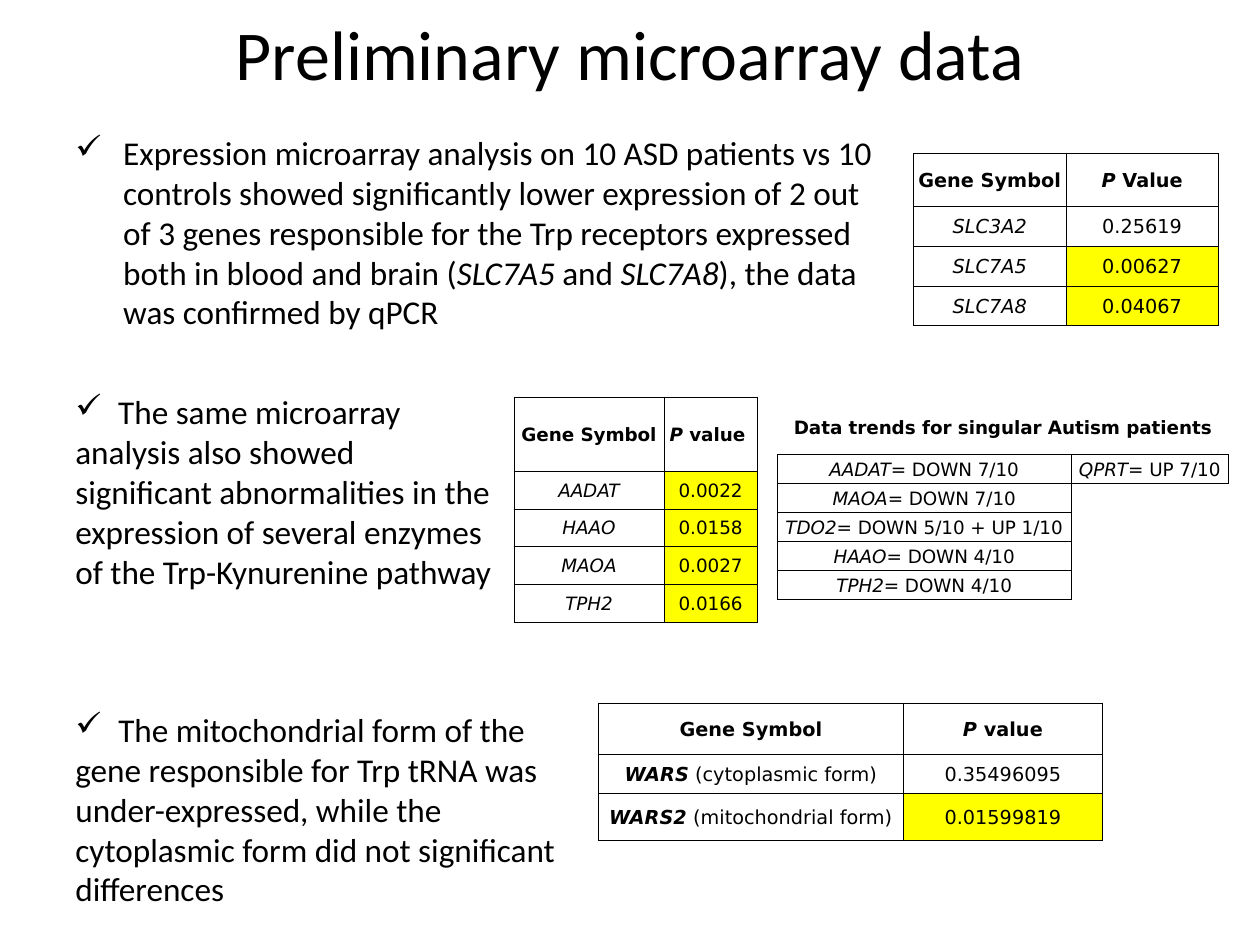
"""Build the preliminary microarray data slide."""
import lxml.etree
import pptx
import pptx.dml.color
import pptx.enum.text
import pptx.oxml.ns
import pptx.util

WIDTH, HEIGHT = 10, 7.5
BLACK, YELLOW = "000000", "FFFF00"
BODY, TABLE = "Calibri", "DejaVu Sans"
CENTER = pptx.enum.text.PP_ALIGN.CENTER
MIDDLE = pptx.enum.text.MSO_ANCHOR.MIDDLE

TITLE = "Preliminary microarray data"
HANGING = dict(margin=0.38, indent=-0.38)
TABBED = dict(margin=0, indent=0, tab=0.34)
BULLETS = [
    ((0.5, 1, 6.67, 1.92), HANGING, [
        ("Expression microarray analysis on 10 ASD patients vs 10 controls showed significantly "
         "lower expression of 2 out of 3 genes responsible for the Trp receptors expressed both "
         "in blood and brain (", ""), ("SLC7A5", "i"), (" and ", ""), ("SLC7A8", "i"),
        ("), the data was confirmed by qPCR", "")]),
    ((0.5, 3.06, 3.5, 2.02), TABBED,
     "\tThe same microarray analysis also showed significant abnormalities in the expression "
     "of several enzymes of the Trp-Kynurenine pathway"),
    ((0.5, 5.58, 4.08, 1.7), TABBED,
     "\tThe mitochondrial form of the gene responsible for Trp tRNA was under-expressed, "
     "while the cytoplasmic form did not significant differences"),
]


def gene(name, rest="", style="i"):
    """Return the runs for an italic gene symbol and what follows it."""
    return [(name, style), (rest, "")] if rest else [(name, style)]


def header(value):
    """Return the bold header row of a gene table."""
    return [[("Gene Symbol", "b")], [("P", "bi"), (value, "b")]]


TABLES = [
    dict(at=(7.25, 1.22), cols=[1.21, 1.21], heights=[0.42] + [0.315] * 3, size=11, bare=0, rows=[
        header(" Value"),
        [gene("SLC3A2"), "0.25619"],
        [gene("SLC7A5"), "0.00627"],
        [gene("SLC7A8"), "0.04067"]]),
    dict(at=(4.08, 2.67), cols=[1.19, 0.74], heights=[0.3, 0.18, 0.59] + [0.3] * 4, size=10.5,
         bare=2, rows=[
        [""],
        ["", ""],
        header(" value "),
        [gene("AADAT"), "0.0022"],
        [gene("HAAO"), "0.0158"],
        [gene("MAOA"), "0.0027"],
        [gene("TPH2"), "0.0166"]]),
    dict(at=(6.17, 3.17), cols=[2.33, 1.25], heights=[0.44] + [0.23] * 5, size=10.5, bare=1, rows=[
        [[("Data trends for singular Autism patients", "b")]],
        [gene("AADAT", "= DOWN 7/10"), gene("QPRT", "= UP 7/10")],
        [gene("MAOA", "= DOWN 7/10"), ""],
        [gene("TDO2", "= DOWN 5/10 + UP 1/10"), ""],
        [gene("HAAO", "= DOWN 4/10"), ""],
        [gene("TPH2", "= DOWN 4/10"), ""]]),
    dict(at=(4.75, 5.58), cols=[2.42, 1.58], heights=[0.41, 0.31, 0.37], size=11, bare=0, rows=[
        header(" value"),
        [gene("WARS", " (cytoplasmic form)", "bi"), "0.35496095"],
        [gene("WARS2", " (mitochondrial form)", "bi"), "0.01599819"]]),
]


def inches(*values):
    """Convert numbers to lengths."""
    return [pptx.util.Inches(v) for v in values]


def color(value):
    """Return the colour for a hex string."""
    return pptx.dml.color.RGBColor.from_string(value)


def sub(parent, tag, **attrs):
    """Append a drawing element to parent."""
    el = lxml.etree.SubElement(parent, pptx.oxml.ns.qn("a:" + tag))
    for key, value in attrs.items():
        el.set(key, str(value))
    return el


def write(tf, text, size, font, align=None, bullet=None):
    """Write a string or a list of (text, style) runs as one paragraph."""
    p = tf.paragraphs[0]
    if align is not None:
        p.alignment = align
    if bullet:
        ppr = p._p.get_or_add_pPr()
        ppr.set("marL", str(pptx.util.Inches(bullet["margin"])))
        ppr.set("indent", str(pptx.util.Inches(bullet["indent"])))
        sub(ppr, "buChar", char="✓")
        if "tab" in bullet:
            sub(sub(ppr, "tabLst"), "tab", pos=pptx.util.Inches(bullet["tab"]), algn="l")
    if not text:
        sub(p._p, "endParaRPr", sz=int(size * 100))
        return
    for part, style in [(text, "")] if isinstance(text, str) else text:
        r = p.add_run()
        r.text = part
        r.font.size = pptx.util.Pt(size)
        r.font.name = font
        r.font.bold = "b" in style
        r.font.italic = "i" in style
        r.font.color.rgb = color(BLACK)


def add_text(s, at, text, size, anchor=None, **kw):
    """Add a wrapping text box."""
    tf = s.shapes.add_textbox(*inches(*at)).text_frame
    tf.word_wrap = True
    if anchor is not None:
        tf.vertical_anchor = anchor
    write(tf, text, size, BODY, **kw)


def add_borders(cell, edges):
    """Draw each edge of a cell or clear it."""
    tcpr = cell._tc.get_or_add_tcPr()
    for side, shown in edges:
        ln = sub(tcpr, "ln" + side, w=pptx.util.Pt(0.5))
        if shown:
            sub(sub(ln, "solidFill"), "srgbClr", val=BLACK)
        else:
            sub(ln, "noFill")


def add_table(s, at, cols, heights, size, bare, rows):
    """Add a table whose filled cells below the bare rows are framed."""
    frame = s.shapes.add_table(len(rows), len(cols),
                               *inches(*at, sum(cols), sum(heights)))
    t = frame.table
    t.first_row = t.horz_banding = False
    for col, width in zip(t.columns, cols):
        col.width = pptx.util.Inches(width)
    framed = {(i, j) for i, row in enumerate(rows) for j, text in enumerate(row)
              if i >= bare and text}
    for i, row in enumerate(rows):
        t.rows[i].height = pptx.util.Inches(heights[i])
        if len(row) < len(cols):
            t.cell(i, 0).merge(t.cell(i, len(cols) - 1))
        for j in range(len(cols)):
            cell = t.cell(i, j)
            text = row[j] if j < len(row) else ""
            cell.vertical_anchor = MIDDLE
            cell.margin_left = cell.margin_right = cell.margin_top = pptx.util.Inches(0.01)
            cell.margin_bottom = 0
            write(cell.text_frame, text, 8 if not text else size, TABLE, align=CENTER)
            beside = [("L", (i, j - 1)), ("R", (i, j + 1)), ("T", (i - 1, j)), ("B", (i + 1, j))]
            add_borders(cell, [(side, bool({(i, j), n} & framed)) for side, n in beside])
            if isinstance(text, str) and text.startswith("0.0"):
                cell.fill.solid()
                cell.fill.fore_color.rgb = color(YELLOW)
            else:
                cell.fill.background()


def main():
    """Assemble and save the slide."""
    prs = pptx.Presentation()
    prs.slide_width, prs.slide_height = inches(WIDTH, HEIGHT)
    s = prs.slides.add_slide(prs.slide_layouts[6])
    add_text(s, (0.5, 0, 9, 0.83), TITLE, 40, anchor=MIDDLE, align=CENTER)
    for table in TABLES:
        add_table(s, **table)
    for at, bullet, text in BULLETS:
        add_text(s, at, text, 19, bullet=bullet)
    prs.save("out.pptx")


if __name__ == "__main__":
    main()
